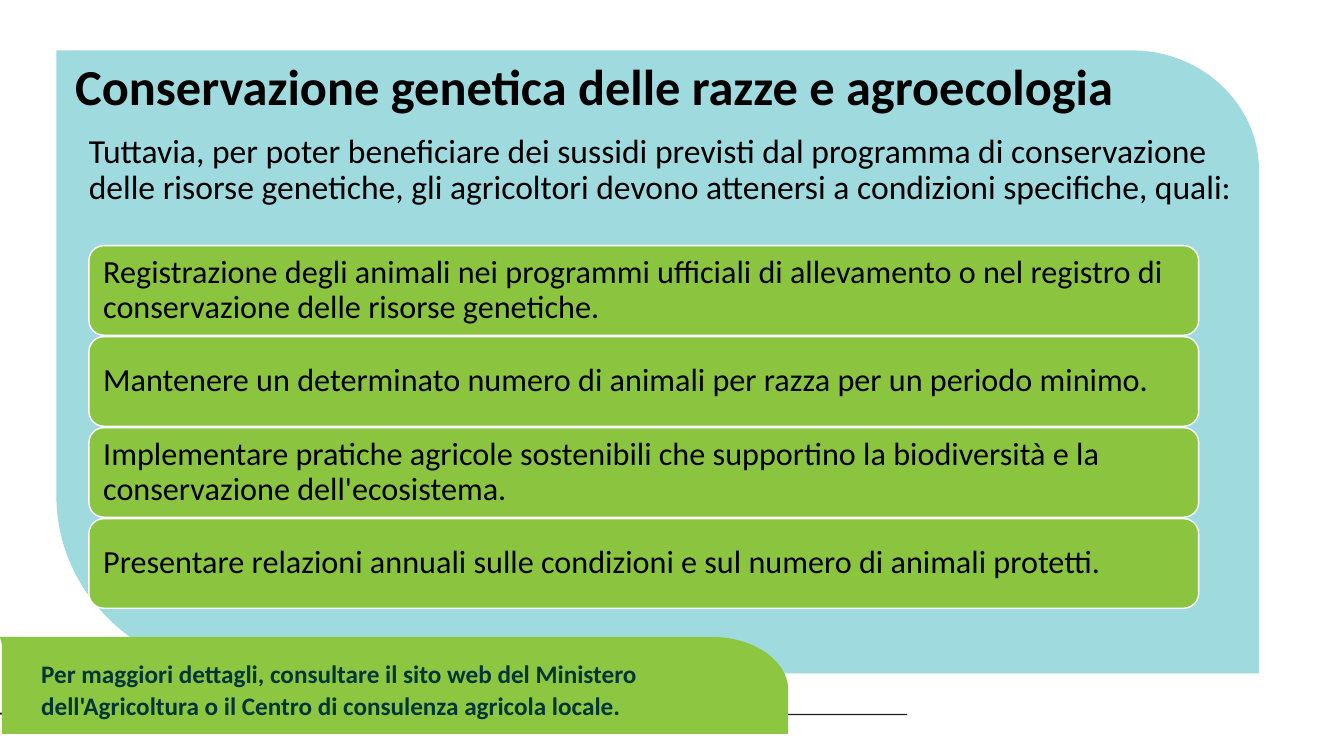
from dataclasses import dataclass

from lxml.etree import SubElement
from pptx import Presentation
from pptx.dml.color import RGBColor
from pptx.enum.shapes import MSO_SHAPE as Shape
from pptx.enum.text import MSO_ANCHOR as Anchor, MSO_AUTO_SIZE as Fit, PP_ALIGN as Align
from pptx.oxml.ns import qn
from pptx.util import Pt


@dataclass(frozen=True)
class Theme:
    font: str = "Calibri"
    ink: str = "000000"
    teal: str = "043637"
    panel: str = "9FDADF"
    green: str = "8DC641"
    card: str = "8BC540"
    edge: str = "FFFFFF"
    ground: str = "231F20"
    title: int = 36
    body: int = 24
    item: int = 23
    note: int = 18


def write(frame, text, size, color, font, bold=False, lead=0.9, indent=0,
          pads=(7.2, 3.6), anchor=Anchor.TOP):
    """Put one formatted paragraph in a text frame."""
    frame.word_wrap = True
    frame.auto_size = Fit.NONE
    frame.vertical_anchor = anchor
    frame.margin_left = frame.margin_right = Pt(pads[0])
    frame.margin_top = frame.margin_bottom = Pt(pads[1])
    para = frame.paragraphs[0]
    props = para._p.get_or_add_pPr()
    props.set("marL", str(Pt(indent)))
    props.set("indent", "0")
    SubElement(props, qn("a:buNone"))
    para.alignment = Align.LEFT
    para.line_spacing = lead
    para.space_before = para.space_after = Pt(0)
    run = para.add_run()
    run.text = text
    run.font.name = font
    run.font.size = Pt(size)
    run.font.bold = bold
    run.font.color.rgb = RGBColor.from_string(color)


def bend(shape, steps):
    """Turn the lines of an outline into cubic curves where a step has six numbers."""
    for line, step in zip(list(shape.element.iter(qn("a:lnTo"))), steps):
        if len(step) == 6:
            line.tag = qn("a:cubicBezTo")
            end = line[0]
            for x, y in (step[:2], step[2:4]):
                knot = SubElement(line, qn("a:pt"))
                knot.set("x", str(Pt(x) - shape.left))
                knot.set("y", str(Pt(y) - shape.top))
            line.append(end)


class Page:
    def __init__(self, slide, theme):
        self.slide, self.theme = slide, theme

    def paint(self, shape, fill, edge=None):
        shape.shadow.inherit = False
        shape.fill.solid()
        shape.fill.fore_color.rgb = RGBColor.from_string(fill)
        if edge:
            shape.line.color.rgb = RGBColor.from_string(edge)
            shape.line.width = Pt(1)
        else:
            shape.line.fill.background()

    def form(self, steps, fill):
        ends = [(Pt(step[-2]), Pt(step[-1])) for step in steps]
        maker = self.slide.shapes.build_freeform(*ends[0], scale=1.0)
        maker.add_line_segments(ends[1:], close=True)
        shape = maker.convert_to_shape()
        bend(shape, steps[1:])
        self.paint(shape, fill)

    def hold(self, index, text, box, size, **style):
        shape = self.slide.placeholders[index]
        shape.left, shape.top, shape.width, shape.height = map(Pt, box)
        shape.element.getparent().append(shape.element)  # bring to front
        write(shape.text_frame, text, size, self.theme.ink, self.theme.font, **style)

    def card(self, text, box):
        shape = self.slide.shapes.add_shape(Shape.ROUNDED_RECTANGLE, *map(Pt, box))
        self.paint(shape, self.theme.card, self.theme.edge)
        write(shape.text_frame, text, self.theme.item, self.theme.ink,
              self.theme.font, pads=(7.2, 7.2), anchor=Anchor.MIDDLE)

    def note(self, text, box):
        shape = self.slide.shapes.add_textbox(*map(Pt, box))
        write(shape.text_frame, text, self.theme.note, self.theme.teal,
              self.theme.font, bold=True, lead=1.07)


ITEMS = (
    "Registrazione degli animali nei programmi ufficiali di allevamento o nel "
    "registro di conservazione delle risorse genetiche.",
    "Mantenere un determinato numero di animali per razza per un periodo minimo.",
    "Implementare pratiche agricole sostenibili che supportino la biodiversità e "
    "la conservazione dell'ecosistema.",
    "Presentare relazioni annuali sulle condizioni e sul numero di animali protetti.",
)


def main():
    theme = Theme()
    deck = Presentation()
    deck.slide_width, deck.slide_height = Pt(960), Pt(540)
    page = Page(deck.slides.add_slide(deck.slide_layouts[1]), theme)

    # Ground line, main panel and footer tab
    page.form([(648, 510.9), (319, 510.9), (317.5, 510.9, 201.6, 509.8, 160.6, 509),
               (111.6, 507.6, 37.4, 509.8, 10.1, 509.8),
               (4.3, 510.5, 0.7, 510.5, 0, 510.5), (0, 509),
               (0.7, 509, 4.3, 509, 10.1, 509),
               (37.4, 508.3, 111.6, 506.9, 160.6, 507.6),
               (202.3, 509, 317.5, 509.9, 319, 509.9), (648, 509.9)], theme.ground)
    page.form([(40.3, 36), (808.6, 36), (858.2, 36, 899.3, 74.2, 899.3, 121.7),
               (899.3, 481), (174.2, 481),
               (100.1, 481, 40.3, 424.1, 40.3, 354.2)], theme.panel)
    page.form([(0, 455), (509, 455), (538.6, 455, 563, 472.3, 563, 492.5),
               (563, 524.2), (1.4, 524.2), (1.4, 468.7),
               (1.4, 465.8, 1.4, 463, 1.4, 460.8)], theme.green)

    # Introduction and title
    page.hold(1, "Tuttavia, per poter beneficiare dei sussidi previsti dal programma "
              "di conservazione delle risorse genetiche, gli agricoltori devono "
              "attenersi a condizioni specifiche, quali:",
              (38.2, 92.5, 869.8, 259.2), theme.body, indent=18)
    page.hold(0, "Conservazione genetica delle razze e agroecologia",
              (46.5, 40.3, 841, 78.5), theme.title, bold=True)

    # Conditions, evenly stacked
    for row, text in enumerate(ITEMS):
        page.card(text, (63.5, 175.5 + 65 * row, 792.7, 64))

    # Footer note
    page.note("Per maggiori dettagli, consultare il sito web del Ministero "
              "dell'Agricoltura o il Centro di consulenza agricola locale.",
              (22.3, 465.1, 521.3, 52.6))

    deck.save("out.pptx")


if __name__ == "__main__":
    main()
